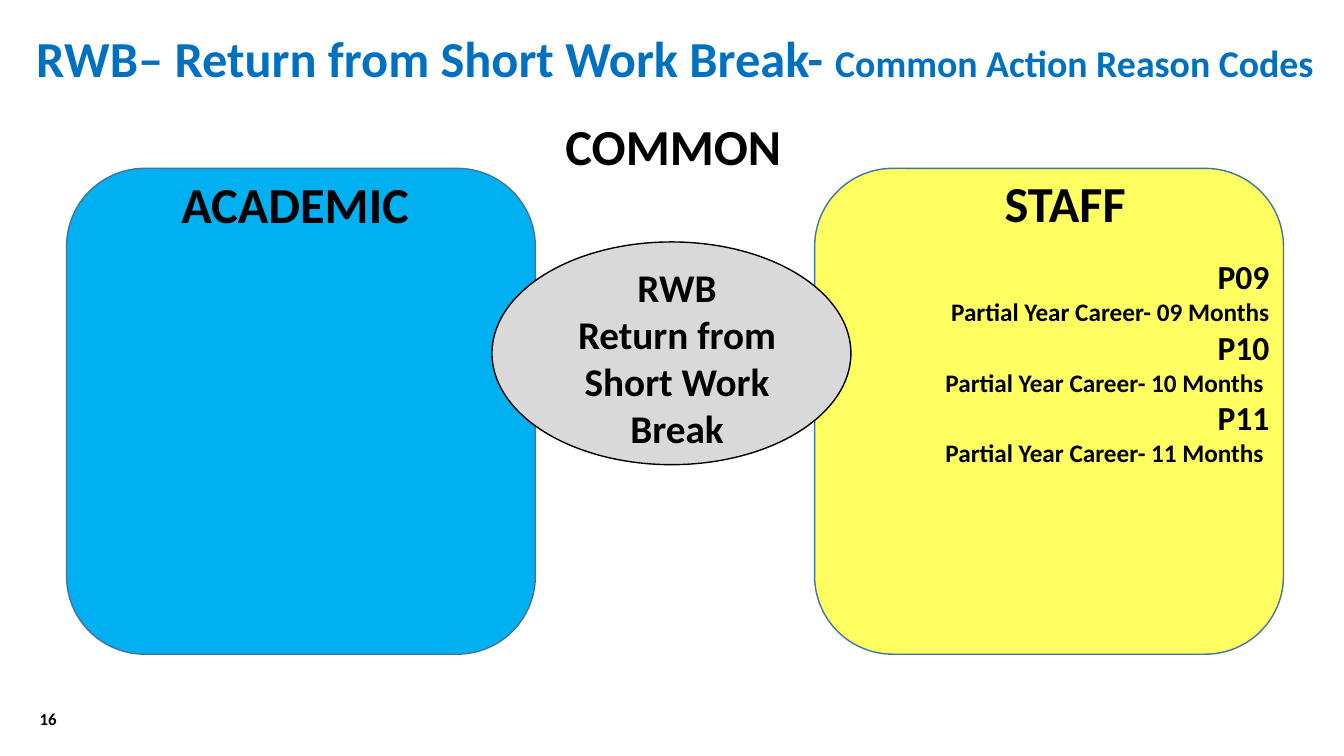
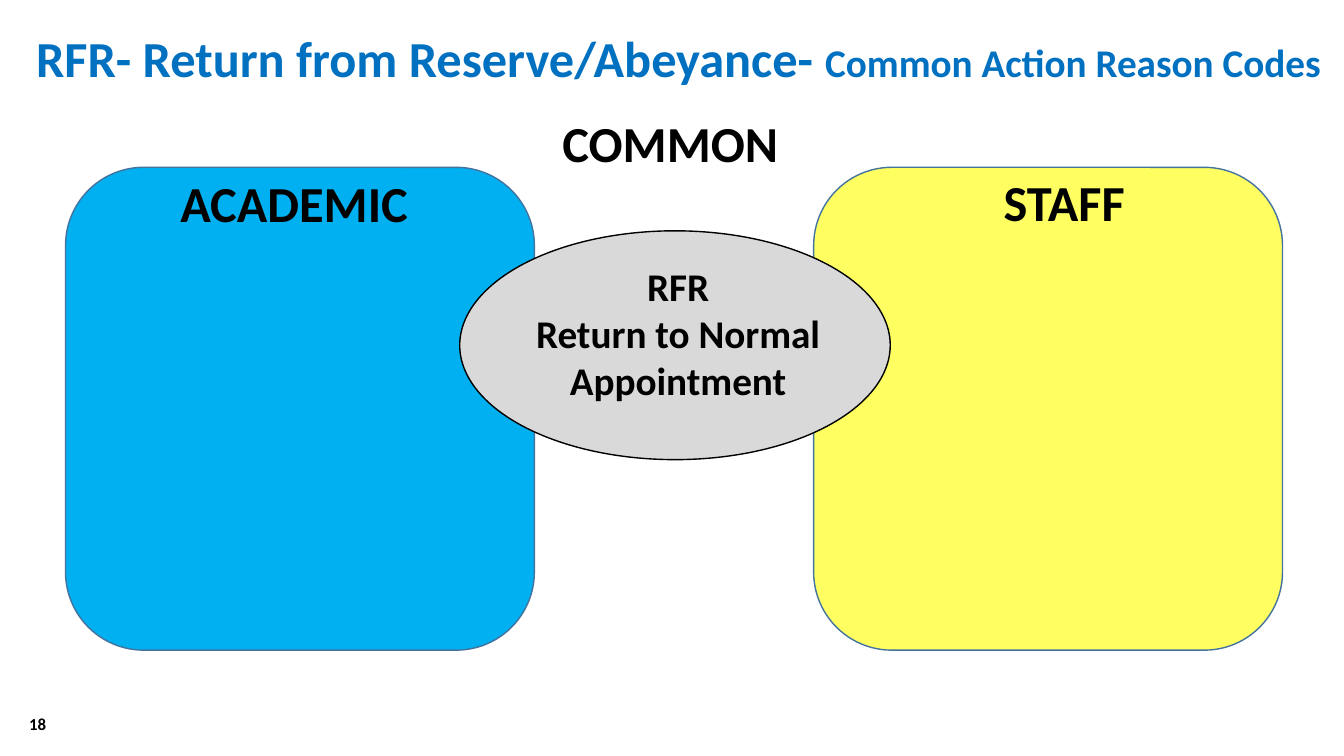
from dataclasses import dataclass

from lxml import etree
from pptx import Presentation
from pptx import util as u
from pptx.dml.color import RGBColor
from pptx.enum import shapes, text
from pptx.oxml.ns import qn

PX = 9144
FONT = "Calibri"
COLORS = {
    "white": "FFFFFF",
    "title": "0070C0",
    "ink": "000000",
    "academic": "00B0F0",
    "staff": "FFFF00",
    "panel_line": "43739E",
    "common": "D9D9D9",
}
LEFT, CENTER, RIGHT = text.PP_ALIGN.LEFT, text.PP_ALIGN.CENTER, text.PP_ALIGN.RIGHT
TOP, MIDDLE = text.MSO_ANCHOR.TOP, text.MSO_ANCHOR.MIDDLE
PANEL_WIDTH = 465
PANEL_STEP = 742
HEADING_HEIGHT = 71
STAFF_OPACITY = 62


@dataclass(frozen=True)
class Area:
    left: int
    top: int
    width: int
    height: int

    def emu(self) -> list[int]:
        return [side * PX for side in (self.left, self.top, self.width, self.height)]


@dataclass(frozen=True)
class Span:
    words: str
    size: int
    color: str = "ink"


@dataclass(frozen=True)
class Reason:
    code: str
    meaning: str


@dataclass(frozen=True)
class ActionPage:
    title: str
    title_width: int
    subtitle_size: int
    panel: Area
    common_heading: Area
    ellipse: Area
    action_area: Area
    action: tuple[str, str]
    number: str
    number_area: Area
    number_align: text.PP_ALIGN
    staff_reasons: tuple[Reason, ...] = ()


PAGES = (
    ActionPage(
        title="RWB– Return from Short Work Break- ",
        title_width=1295,
        subtitle_size=27,
        panel=Area(66, 167, PANEL_WIDTH, 482),
        common_heading=Area(551, 109, 257, HEADING_HEIGHT),
        ellipse=Area(488, 240, 356, 221),
        action_area=Area(523, 256, 297, 201),
        action=("RWB", "Return from Short Work Break"),
        number="16",
        number_area=Area(13, 695, 53, 36),
        number_align=RIGHT,
        staff_reasons=(
            Reason("P09", "Partial Year Career- 09 Months"),
            Reason("P10", "Partial Year Career- 10 Months "),
            Reason("P11", "Partial Year Career- 11 Months "),
        ),
    ),
    ActionPage(
        title="RFR- Return from Reserve/Abeyance- ",
        title_width=1308,
        subtitle_size=28,
        panel=Area(65, 166, PANEL_WIDTH, 479),
        common_heading=Area(548, 106, 257, HEADING_HEIGHT),
        ellipse=Area(456, 229, 427, 227),
        action_area=Area(494, 255, 357, 151),
        action=("RFR", "Return to Normal Appointment"),
        number="18",
        number_area=Area(19, 698, 300, 40),
        number_align=LEFT,
    ),
)


def rgb(name: str) -> RGBColor:
    return RGBColor.from_string(COLORS[name])


def add_text(page, area: Area, lines: list[list[Span]], align=LEFT, anchor=TOP) -> None:
    frame = page.shapes.add_textbox(*area.emu()).text_frame
    frame.word_wrap = True
    frame.vertical_anchor = anchor
    for index, spans in enumerate(lines):
        para = frame.add_paragraph() if index else frame.paragraphs[0]
        para.alignment = align
        for span in spans:
            run = para.add_run()
            run.text = span.words
            run.font.name = FONT
            run.font.size = u.Pt(span.size)
            run.font.bold = True
            run.font.color.rgb = rgb(span.color)


def add_figure(page, kind: shapes.MSO_SHAPE, area: Area, fill: str, line: str,
               opacity: int = 100) -> None:
    figure = page.shapes.add_shape(kind, *area.emu())
    figure.shadow.inherit = False
    figure.fill.solid()
    figure.fill.fore_color.rgb = rgb(fill)
    figure.line.color.rgb = rgb(line)
    figure.line.width = u.Pt(1)
    if opacity < 100:
        color = figure.fill._xPr.find(qn("a:solidFill"))[0]
        etree.SubElement(color, qn("a:alpha")).set("val", str(opacity * 1000))


def add_heading(page, words: str, area: Area, align=LEFT) -> None:
    add_text(page, area, [[Span(words, 36)]], align)


def draw_page(deck, content: ActionPage) -> None:
    page = deck.slides.add_slide(deck.slide_layouts[6])
    page.background.fill.solid()
    page.background.fill.fore_color.rgb = rgb("white")

    panel = content.panel
    staff_left = panel.left + PANEL_STEP
    staff = Area(staff_left, panel.top, panel.width, panel.height)
    rounded = shapes.MSO_SHAPE.ROUNDED_RECTANGLE
    add_figure(page, rounded, staff, "staff", "panel_line", STAFF_OPACITY)
    add_figure(page, rounded, panel, "academic", "panel_line")

    add_text(page, Area(26, 22, content.title_width, HEADING_HEIGHT), [[
        Span(content.title, 36, "title"),
        Span("Common Action Reason Codes", content.subtitle_size, "title"),
    ]])
    if content.staff_reasons:
        lines = []
        for reason in content.staff_reasons:
            lines += [[Span(reason.code, 24)], [Span(reason.meaning, 18)]]
        add_text(page, Area(staff_left - 3, panel.top + 82, 464, 330), lines, RIGHT)

    add_heading(page, "STAFF",
                Area(staff_left + 137, panel.top - 1, 223, HEADING_HEIGHT), CENTER)
    add_heading(page, "ACADEMIC", Area(panel.left + 104, panel.top, 257, HEADING_HEIGHT))
    add_heading(page, "COMMON", content.common_heading)

    add_figure(page, shapes.MSO_SHAPE.OVAL, content.ellipse, "common", "ink")
    add_text(page, content.action_area,
             [[Span(words, 28)] for words in content.action], CENTER)
    add_text(page, content.number_area, [[Span(content.number, 12)]],
             content.number_align, MIDDLE)


def main() -> None:
    deck = Presentation()
    deck.slide_width = u.Inches(13.33)
    deck.slide_height = u.Inches(7.5)
    for content in PAGES:
        draw_page(deck, content)
    deck.save("out.pptx")


if __name__ == "__main__":
    main()
